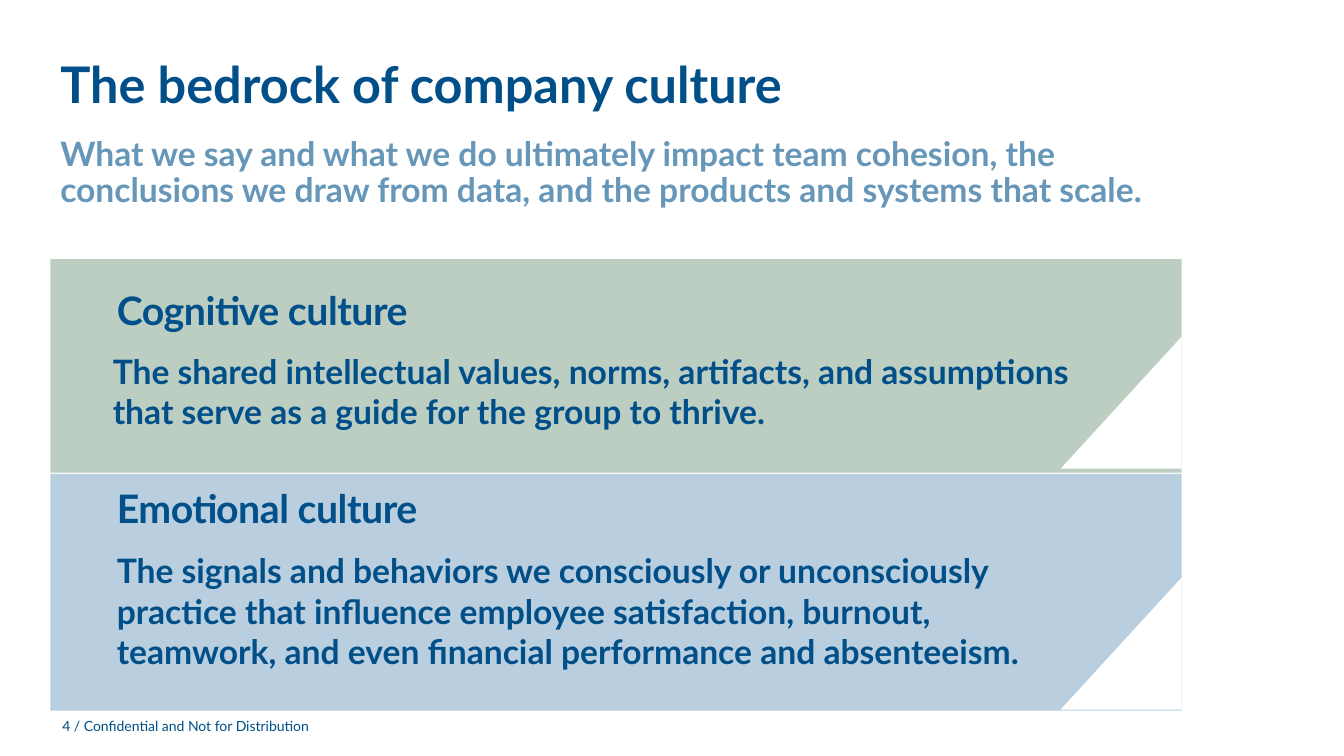
from pptx import Presentation
from pptx.dml.color import RGBColor
from pptx.enum.shapes import MSO_SHAPE as Preset
from pptx.enum.text import MSO_ANCHOR as Anchor
from pptx.util import Inches, Pt

NAVY = RGBColor(0x01, 0x4F, 0x88)
HEADING_NAVY = RGBColor(0x01, 0x50, 0x89)
STEEL = RGBColor(0x66, 0x96, 0xB8)
SAGE = RGBColor(0xBC, 0xCD, 0xC2)
SKY = RGBColor(0xB9, 0xCE, 0xDE)
WHITE = RGBColor(0xFF, 0xFF, 0xFF)

CELL = 0.5  # inches per grid column and row
MARGIN = 1
BAND_WIDTH = 22.44
NOTCH_WIDTH, NOTCH_HEIGHT = 2.4, 2.62

# top, height, colour, heading, heading top, text, text box, notch top
BANDS = [
    (5.14, 4.24, SAGE, "Cognitive culture", 5.68,
     "The shared\u00a0intellectual\u00a0values, norms, artifacts, and assumptions "
     "that serve as a guide for the group to thrive.",
     (2.04, 6.86, 19.96, 1.82), 6.68),
    (9.4, 4.7, SKY, "Emotional culture", 9.62,
     "The signals and behaviors we consciously or unconsciously practice that "
     "influence employee satisfaction, burnout, teamwork, and even financial "
     "performance and absenteeism.",
     (2.12, 10.82, 18.98, 2.62), 11.46),
]


class SlideBuilder:
    font_name = "Lato"

    def __init__(self, slide):
        self.slide = slide

    def grid(self, box):
        """Turn left, top, width and height in grid cells into lengths."""
        return [Inches(cells * CELL) for cells in box]

    def text(self, words, box, size, color=NAVY, bold=True, line_spacing=None,
             anchor=Anchor.TOP, tracking=None):
        frame = self.slide.shapes.add_textbox(*self.grid(box)).text_frame
        frame.word_wrap = True
        frame.vertical_anchor = anchor
        paragraph = frame.paragraphs[0]
        run = paragraph.add_run()
        run.text = words
        if line_spacing:
            paragraph.line_spacing = line_spacing
        font = paragraph.font
        font.name, font.size, font.bold = self.font_name, Pt(size), bold
        font.color.rgb = color
        if tracking:
            run.font._element.set("spc", str(tracking))

    def shape(self, preset, box, color):
        shape = self.slide.shapes.add_shape(preset, *self.grid(box))
        shape.shadow.inherit = False
        shape.fill.solid()
        shape.fill.fore_color.rgb = color
        shape.line.fill.background()
        return shape

    def notch(self, top):
        """Cut the lower right corner of a band with a mirrored triangle."""
        left = MARGIN + BAND_WIDTH - NOTCH_WIDTH
        triangle = self.shape(Preset.RIGHT_TRIANGLE,
                              (left, top, NOTCH_WIDTH, NOTCH_HEIGHT), WHITE)
        triangle._element.spPr.xfrm.set("flipH", "1")


def main():
    presentation = Presentation()
    presentation.slide_width = Inches(13.33)
    presentation.slide_height = Inches(7.5)
    builder = SlideBuilder(presentation.slides.add_slide(presentation.slide_layouts[6]))

    builder.text("4 / Confidential and Not for Distribution", (1.04, 14, 5.9, 0.8),
                 10, bold=False, anchor=Anchor.MIDDLE)
    builder.text("The bedrock of company culture", (MARGIN, 1.1, 23, 2.9),
                 36, line_spacing=0.9)
    builder.text("What we say and what we do ultimately impact team cohesion, the "
                 "conclusions we draw from data, and the products and systems that scale.",
                 (MARGIN, 2.62, 23, 2.02), 24, STEEL, line_spacing=0.9)

    for top, height, color, heading, heading_top, words, text_box, notch_top in BANDS:
        builder.shape(Preset.RECTANGLE, (MARGIN, top, BAND_WIDTH, height), color)
        builder.notch(notch_top)
        builder.text(heading, (2.12, heading_top, 11.62, 1.06), 28, HEADING_NAVY,
                     line_spacing=0.9, tracking=-30)
        builder.text(words, text_box, 24)

    presentation.save("out.pptx")


if __name__ == "__main__":
    main()
